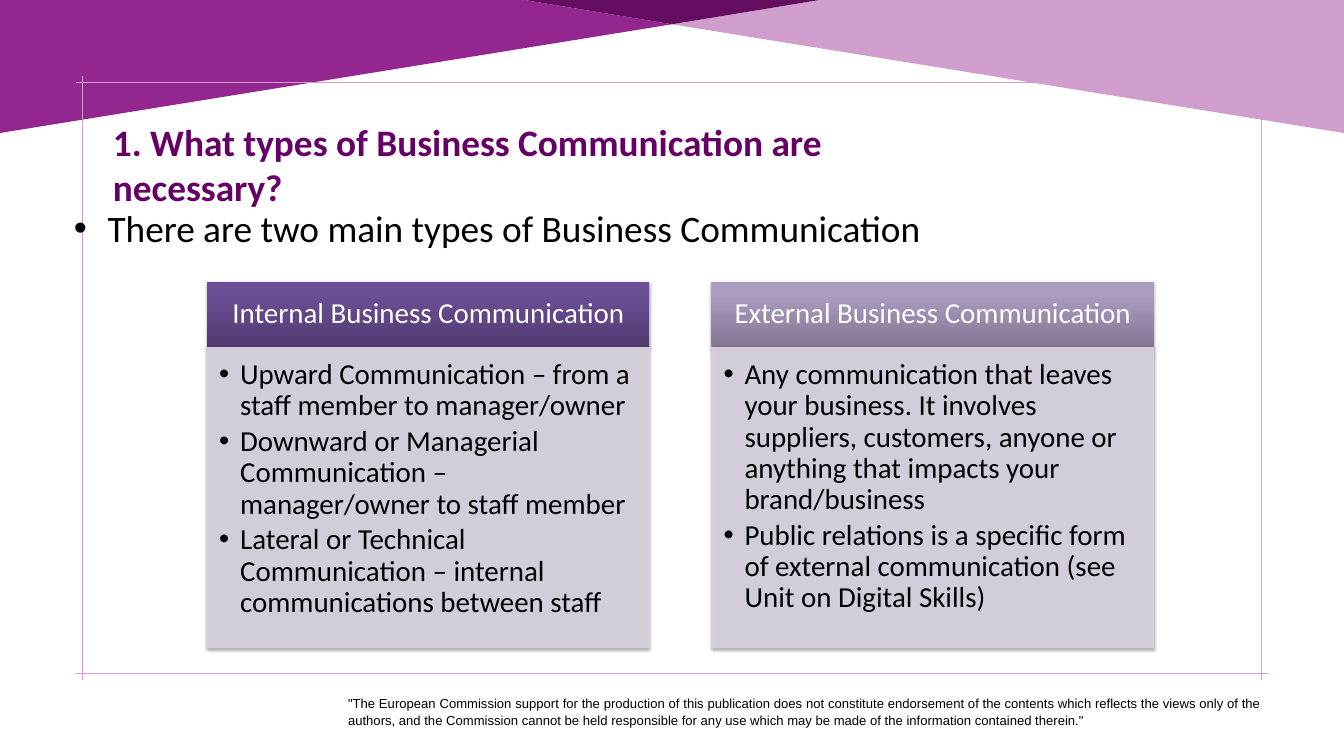
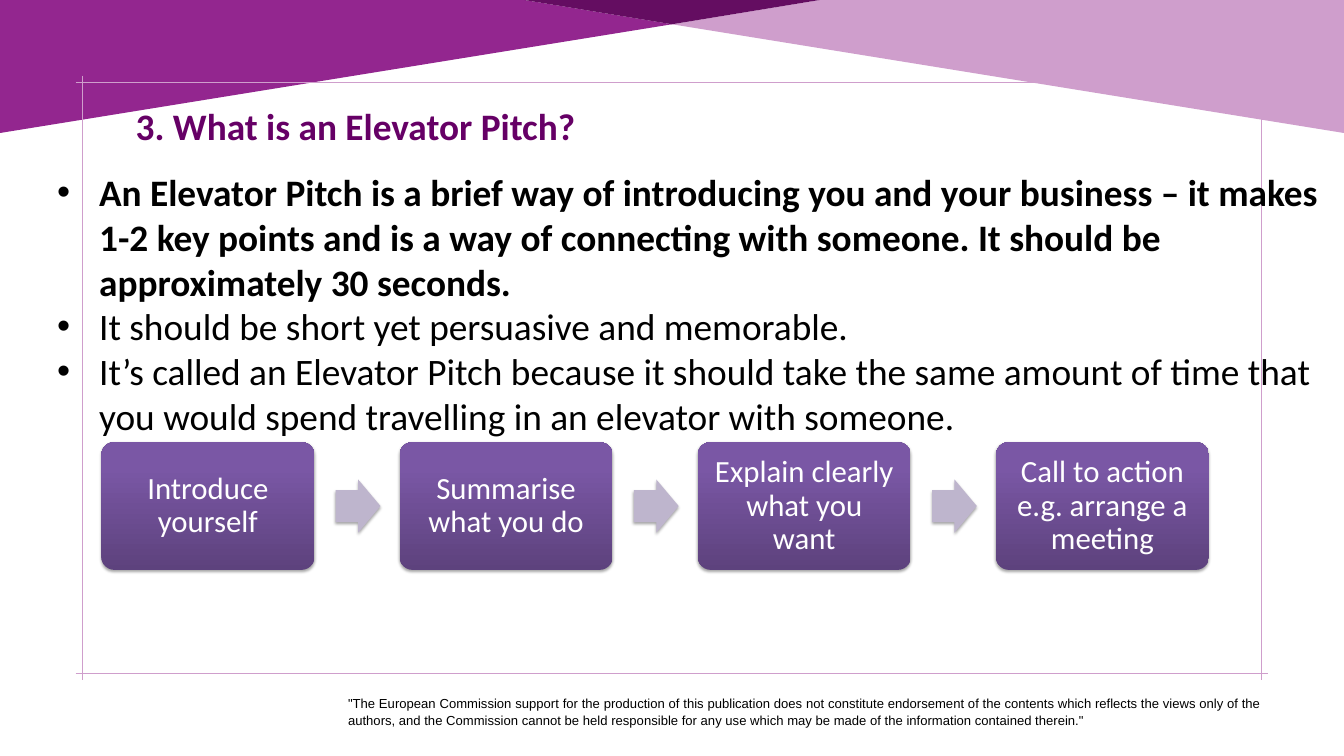
import pptx
import pptx.dml.color
import pptx.enum.shapes
import pptx.enum.text
import pptx.oxml
import pptx.oxml.ns
import pptx.util

Pt = pptx.util.Pt
qn = pptx.oxml.ns.qn
SHAPE = pptx.enum.shapes.MSO_SHAPE
ALIGN = pptx.enum.text.PP_ALIGN
ANCHOR = pptx.enum.text.MSO_ANCHOR
NS = pptx.oxml.ns.nsdecls("a")

PURPLE, LILAC, DEEP = "93268F", "CF9ECC", "640D61"
TITLE, BLACK, WHITE = "660066", "000000", "FFFFFF"
PANEL, ARROW = "D7D1DF", "BEB5CD"
INTERNAL = ("513B71", "6B4E95", "6B4D96")
EXTERNAL = ("827692", "AB9CC0", "AC9DC1")
STEP = ("5D427D", "7A57A5", "7A56A7")

BANDS = {
    "left": (PURPLE, [(0, 142.5), (0, 0), (561.8, 0), (720, 26)]),
    "right": (LILAC, [(1440, 142.5), (720, 26), (878.2, 0), (1440, 0)]),
    "overlap": (DEEP, [(720, 26), (561.8, 0), (878.2, 0)]),
}
DISCLAIMER = (
    '"The European Commission support for the production of this publication '
    "does not constitute endorsement of the contents which reflects the views "
    "only of the authors, and the Commission cannot be held responsible for any "
    'use which may be made of the information contained therein."'
)


# Formatting helpers
def color(hex_value):
    return pptx.dml.color.RGBColor.from_string(hex_value)


def put(target, values):
    for name, value in values.items():
        setattr(target, name, value)


def place(shape, box):
    put(shape, dict(zip(("left", "top", "width", "height"), map(Pt, box))))


def paint(shape, fill, line=None):
    shape.shadow.inherit = False
    shape.fill.solid()
    shape.fill.fore_color.rgb = color(fill)
    if line:
        shape.line.color.rgb = color(line)
        shape.line.width = Pt(0.75)
    else:
        shape.line.fill.background()


def paint_gradient(shape, hues):
    """Run the three hues from the bottom edge to the top."""
    paint(shape, hues[0])
    stops = "".join(
        f'<a:gs pos="{pos}"><a:srgbClr val="{hue}"/></a:gs>'
        for pos, hue in zip((0, 80000, 100000), hues)
    )
    gradient = pptx.oxml.parse_xml(
        f'<a:gradFill {NS} rotWithShape="1"><a:gsLst>{stops}</a:gsLst>'
        '<a:lin ang="16200000" scaled="0"/></a:gradFill>'
    )
    properties = shape.element.spPr
    properties.replace(properties.find(qn("a:solidFill")), gradient)


def make_translucent(shape, percent):
    for hue in shape.element.spPr.iter(qn("a:srgbClr")):
        hue.append(pptx.oxml.parse_xml(f'<a:alpha {NS} val="{percent * 1000}"/>'))


def cast_shadow(shape):
    shape.element.spPr.find(qn("a:effectLst")).append(pptx.oxml.parse_xml(
        f'<a:outerShdw {NS} blurRad="40000" dist="23000" dir="5400000" rotWithShape="0">'
        '<a:srgbClr val="000000"><a:alpha val="35000"/></a:srgbClr></a:outerShdw>'
    ))


def add_bullet(paragraph, indent):
    properties = paragraph._p.get_or_add_pPr()
    properties.set("marL", str(Pt(indent)))
    properties.set("indent", str(-Pt(indent)))
    for bullet_part in (
        f'<a:buClr {NS}><a:srgbClr val="{BLACK}"/></a:buClr>',
        f'<a:buFont {NS} typeface="Arial"/>',
        f'<a:buChar {NS} char="•"/>',
    ):
        properties.append(pptx.oxml.parse_xml(bullet_part))


def write(shape, texts, size, hue=BLACK, font="Calibri", bold=(), indent=0, gap=0,
          insets=(7.2, 3.6, 7.2, 3.6), anchor=ANCHOR.TOP, align=ALIGN.LEFT, spacing=1.0):
    """Fill the shape with one paragraph per text; bold lists the bold ones."""
    frame = shape.text_frame
    sides = ("margin_left", "margin_top", "margin_right", "margin_bottom")
    put(frame, {
        "word_wrap": True,
        "auto_size": pptx.enum.text.MSO_AUTO_SIZE.NONE,
        "vertical_anchor": anchor,
        **dict(zip(sides, map(Pt, insets))),
    })
    for index, text in enumerate(texts):
        paragraph = frame.add_paragraph() if index else frame.paragraphs[0]
        if indent:
            add_bullet(paragraph, indent)
        put(paragraph, {
            "alignment": align,
            "line_spacing": spacing,
            "space_before": Pt(gap if index else 0),
            "space_after": Pt(0),
        })
        run = paragraph.add_run()
        run.text = text
        put(run.font, {"name": font, "size": Pt(size), "bold": index in bold})
        run.font.color.rgb = color(hue)


# Shared slide parts
def add_band(slide, name):
    hue, corners = BANDS[name]
    points = [(Pt(x), Pt(y)) for x, y in corners]
    outline = slide.shapes.build_freeform(*points[0], scale=1.0)
    outline.add_line_segments(points[1:], close=True)
    paint(outline.convert_to_shape(), hue)


def add_frame(slide, box, overshoot=7.2):
    left, top, width, height = box
    right, bottom = left + width, top + height
    edges = [(left - overshoot, y, right + overshoot, y) for y in (top, bottom)]
    edges += [(x, top - overshoot, x, bottom + overshoot) for x in (left, right)]
    for edge in edges:
        rule = slide.shapes.add_connector(
            pptx.enum.shapes.MSO_CONNECTOR.STRAIGHT, *map(Pt, edge))
        rule.line.color.rgb = color(LILAC)
        rule.line.width = Pt(0.5)
        rule.element.spPr.append(pptx.oxml.parse_xml(f"<a:effectLst {NS}/>"))


def add_disclaimer(slide, box):
    disclaimer = slide.shapes.add_textbox(*map(Pt, box))
    write(disclaimer, [DISCLAIMER], 14, font="Arial", align=ALIGN.JUSTIFY, spacing=1.07)


def start_slide(deck, heading, heading_box):
    slide = deck.slides.add_slide(deck.slide_layouts[1])
    add_band(slide, "left")
    add_frame(slide, (88.2, 88.2, 1263.6, 633.6))
    add_band(slide, "right")
    add_band(slide, "overlap")
    add_disclaimer(slide, (365.8, 740.9, 992.9, 37.4))
    # Headings and lists sit above the bands
    for holder in list(slide.placeholders):
        slide.shapes.element.append(holder.element)
    place(slide.shapes.title, heading_box)
    write(slide.shapes.title, [heading], 40, TITLE, bold=(0,))
    return slide


def add_points(slide, box, points, **look):
    body = slide.placeholders[1]
    place(body, box)
    write(body, points, 40, **look)


# Communication types: a header over a bulleted panel
def add_type_columns(slide, box, columns, header_height=70.6, gap_share=0.14):
    left, top, width, height = box
    column_width = width / (len(columns) + gap_share * (len(columns) - 1))
    for index, (name, hues, points) in enumerate(columns):
        x = left + index * column_width * (1 + gap_share)
        header = slide.shapes.add_shape(
            SHAPE.RECTANGLE, *map(Pt, (x, top, column_width, header_height)))
        paint_gradient(header, hues)
        cast_shadow(header)
        write(header, [name], 31, WHITE, insets=(17.3, 10.1, 17.3, 10.1),
              anchor=ANCHOR.MIDDLE, align=ALIGN.CENTER, spacing=0.9)

        panel = slide.shapes.add_shape(SHAPE.RECTANGLE, *map(
            Pt, (x, top + header_height, column_width, height - header_height)))
        paint(panel, PANEL, PANEL)
        make_translucent(panel, 90)
        cast_shadow(panel)
        write(panel, points, 31, indent=22.5, gap=4.7,
              insets=(13, 13, 17.3, 19.4), spacing=0.9)


# Pitch steps: rounded boxes with arrows in the gaps
def add_pitch_steps(slide, box, steps, gap_share=0.4):
    left, top, width, height = box
    step_width = width / (len(steps) + gap_share * (len(steps) - 1))
    arrow_width, arrow_height = step_width * 0.21, step_width * 0.25
    for index, step in enumerate(steps):
        x = left + index * step_width * (1 + gap_share)
        card = slide.shapes.add_shape(
            SHAPE.ROUNDED_RECTANGLE, *map(Pt, (x, top, step_width, height)))
        card.adjustments[0] = 0.1
        paint_gradient(card, STEP)
        cast_shadow(card)
        write(card, [step], 33, WHITE, insets=(14,) * 4,
              anchor=ANCHOR.MIDDLE, align=ALIGN.CENTER, spacing=0.9)
        if index < len(steps) - 1:
            arrow = slide.shapes.add_shape(SHAPE.RIGHT_ARROW, *map(Pt, (
                x + step_width * 1.1, top + (height - arrow_height) / 2,
                arrow_width, arrow_height)))
            arrow.adjustments[0] = 0.6
            paint(arrow, ARROW)
            cast_shadow(arrow)


def build_types_slide(deck):
    slide = start_slide(
        deck, "1. What types of Business Communication are necessary?",
        (113.8, 123.8, 954, 55.4))
    add_points(slide, (72, 216, 1038, 90),
               ["There are two main types of Business Communication"], indent=36)
    add_type_columns(slide, (221.8, 301.7, 1014.5, 392.4), [
        ("Internal Business Communication", INTERNAL, [
            "Upward Communication – from a staff member to manager/owner",
            "Downward or Managerial Communication – manager/owner to staff member",
            "Lateral or Technical Communication – internal communications between staff",
        ]),
        ("External Business Communication", EXTERNAL, [
            "Any communication that leaves your business. It involves suppliers, "
            "customers, anyone or anything that impacts your brand/business",
            "Public relations is a specific form of external communication "
            "(see Unit on Digital Skills)",
        ]),
    ])


def build_pitch_slide(deck):
    slide = start_slide(deck, "3. What is an Elevator Pitch?", (138.2, 106.6, 978, 55.4))
    add_points(slide, (54, 128.9, 1374, 589), [
        "An Elevator Pitch is a brief way of introducing you and your business – it "
        "makes 1-2 key points and is a way of connecting with someone. It should be "
        "approximately 30 seconds.",
        "It should be short yet persuasive and memorable.",
        "It’s called an Elevator Pitch because it should take the same amount of time "
        "that you would spend travelling in an elevator with someone.",
    ], bold=(0,), indent=45, insets=(7.2, 52.4, 7.2, 3.6))
    add_pitch_steps(slide, (108.7, 473.8, 1186.6, 136.8), [
        "Introduce yourself",
        "Summarise what you do",
        "Explain clearly what you want",
        "Call to action e.g. arrange a meeting",
    ])


def main():
    deck = pptx.Presentation()
    put(deck, {"slide_width": Pt(1440), "slide_height": Pt(810)})
    build_types_slide(deck)
    build_pitch_slide(deck)
    deck.save("out.pptx")


if __name__ == "__main__":
    main()
